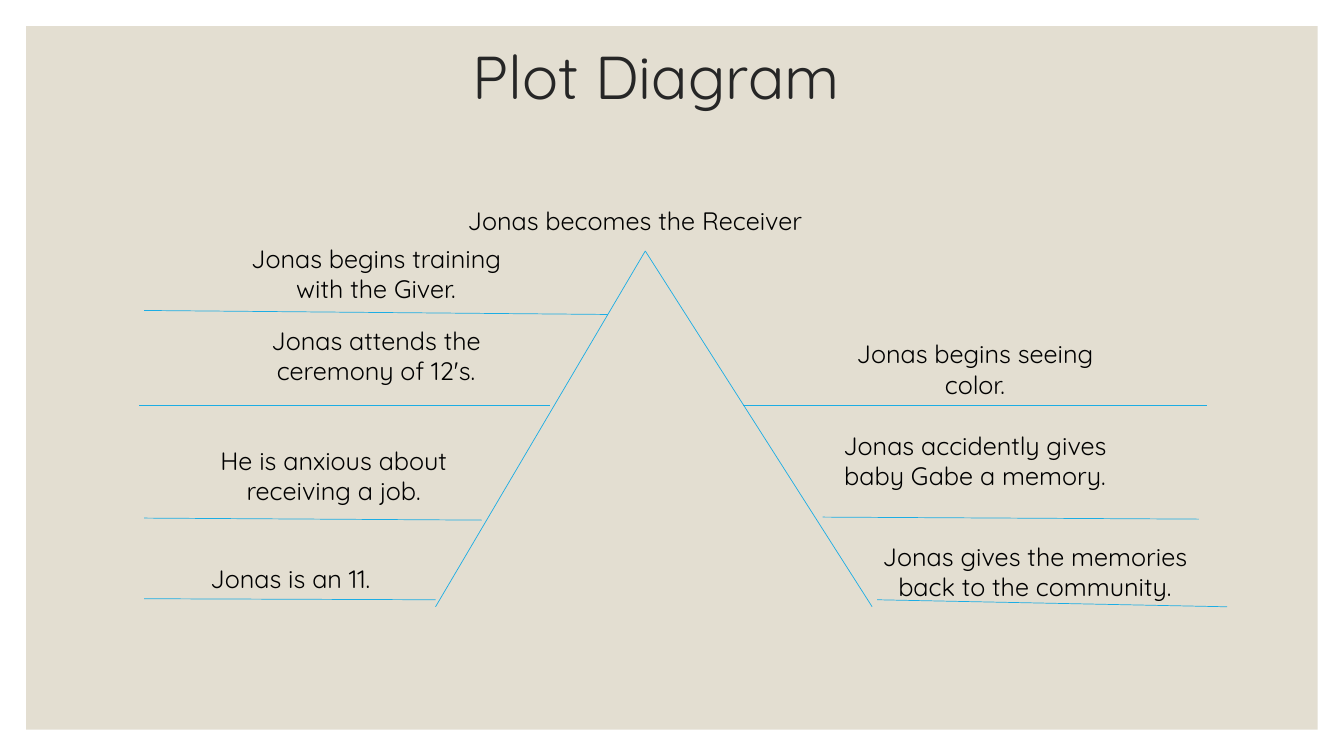
from dataclasses import dataclass

from lxml.etree import SubElement
from pptx import Presentation
from pptx.dml.color import RGBColor
from pptx.enum.shapes import MSO_CONNECTOR, MSO_SHAPE
from pptx.enum.text import MSO_ANCHOR, MSO_AUTO_SIZE, PP_ALIGN
from pptx.oxml.ns import qn
from pptx.slide import Slide
from pptx.util import Inches, Pt


@dataclass(frozen=True)
class Theme:
    font: str = "Quicksand"
    panel: RGBColor = RGBColor(0xE3, 0xDE, 0xD1)
    title: RGBColor = RGBColor(0x26, 0x26, 0x26)
    event: RGBColor = RGBColor(0, 0, 0)
    line: RGBColor = RGBColor(0x1C, 0xAD, 0xE4)
    title_size: float = 43.2
    event_size: float = 18
    line_width: float = 0.5


@dataclass(frozen=True)
class Label:
    text: str
    left: float
    top: float
    width: float = 3
    height: float = 0.71
    align: PP_ALIGN = PP_ALIGN.CENTER


@dataclass(frozen=True)
class Stroke:
    x1: float
    y1: float
    x2: float
    y2: float


THEME = Theme()
SLIDE_WIDTH, SLIDE_HEIGHT, MARGIN = 13.33, 7.5, 0.26

TITLE = Label("Plot Diagram", 3.1, 0.58, 6.82, 0.42)
CLIMAX = Label("Jonas becomes the Receiver", 4.54, 1.99, 3.76, 0.4, PP_ALIGN.LEFT)
RISING_ACTION = [
    Label("Jonas is an 11.", 1.38, 5.54, height=0.4),
    Label("He is anxious about receiving a job.", 1.81, 4.37),
    Label("Jonas attends the ceremony of 12's.", 2.23, 3.18),
    Label("Jonas begins training with the Giver.", 2.23, 2.36),
]
FALLING_ACTION = [
    Label("Jonas begins seeing color.", 8.17, 3.31),
    Label("Jonas accidently gives baby Gabe a memory.", 8.17, 4.22, height=1.01),
    Label("Jonas gives the memories back to the community.", 8.35, 5.32, 3.83),
]

PEAK = (6.4, 2.49)
SLOPES = [Stroke(4.32, 6.02, *PEAK), Stroke(*PEAK, 8.65, 6.02)]
RISING_STEPS = [
    Stroke(1.43, 5.94, 4.32, 5.95),
    Stroke(1.43, 5.14, 4.78, 5.16),
    Stroke(1.38, 4.02, 5.45, 4.02),
    Stroke(1.43, 3.08, 6.03, 3.12),
]
FALLING_STEPS = [
    Stroke(7.37, 4.02, 11.97, 4.02),
    Stroke(8.16, 5.13, 11.89, 5.15),
    Stroke(8.7, 5.95, 12.17, 6.02),
]

EVENT_FRAME = {"word_wrap": True, "auto_size": MSO_AUTO_SIZE.SHAPE_TO_FIT_TEXT}
TITLE_FRAME = {
    "word_wrap": True,
    "auto_size": MSO_AUTO_SIZE.NONE,
    "vertical_anchor": MSO_ANCHOR.MIDDLE,
}
EVENT_FONT = {"name": THEME.font, "size": Pt(THEME.event_size)}
TITLE_FONT = {"name": THEME.font, "size": Pt(THEME.title_size)}


def apply_format(target: object, values: dict) -> None:
    for name, value in values.items():
        setattr(target, name, value)


def add_panel(slide: Slide) -> None:
    panel = slide.shapes.add_shape(
        MSO_SHAPE.RECTANGLE,
        Inches(MARGIN),
        Inches(MARGIN),
        Inches(SLIDE_WIDTH - 2 * MARGIN),
        Inches(SLIDE_HEIGHT - 2 * MARGIN),
    )
    panel.shadow.inherit = False
    panel.fill.solid()
    panel.fill.fore_color.rgb = THEME.panel
    panel.line.fill.background()


def add_label(
    slide: Slide,
    label: Label,
    frame_format: dict,
    font_format: dict,
    color: RGBColor,
    line_spacing: float = 1.0,
) -> None:
    box = slide.shapes.add_textbox(
        *map(Inches, (label.left, label.top, label.width, label.height))
    )
    apply_format(box.text_frame, frame_format)
    paragraph = box.text_frame.paragraphs[0]
    apply_format(paragraph, {"alignment": label.align, "line_spacing": line_spacing})
    run = paragraph.add_run()
    run.text = label.text
    apply_format(run.font, font_format)
    run.font.color.rgb = color


def add_stroke(slide: Slide, stroke: Stroke) -> None:
    connector = slide.shapes.add_connector(
        MSO_CONNECTOR.STRAIGHT,
        *map(Inches, (stroke.x1, stroke.y1, stroke.x2, stroke.y2)),
    )
    connector.line.color.rgb = THEME.line
    connector.line.width = Pt(THEME.line_width)
    SubElement(connector._element.spPr, qn("a:effectLst"))


def main() -> None:
    presentation = Presentation()
    presentation.slide_width = Inches(SLIDE_WIDTH)
    presentation.slide_height = Inches(SLIDE_HEIGHT)
    slide = presentation.slides.add_slide(presentation.slide_layouts[6])

    add_panel(slide)
    add_label(slide, TITLE, TITLE_FRAME, TITLE_FONT, THEME.title, line_spacing=0.9)
    for stroke in SLOPES + RISING_STEPS + FALLING_STEPS:
        add_stroke(slide, stroke)
    for event in [*RISING_ACTION, CLIMAX, *FALLING_ACTION]:
        add_label(slide, event, EVENT_FRAME, EVENT_FONT, THEME.event)

    presentation.save("out.pptx")


if __name__ == "__main__":
    main()
